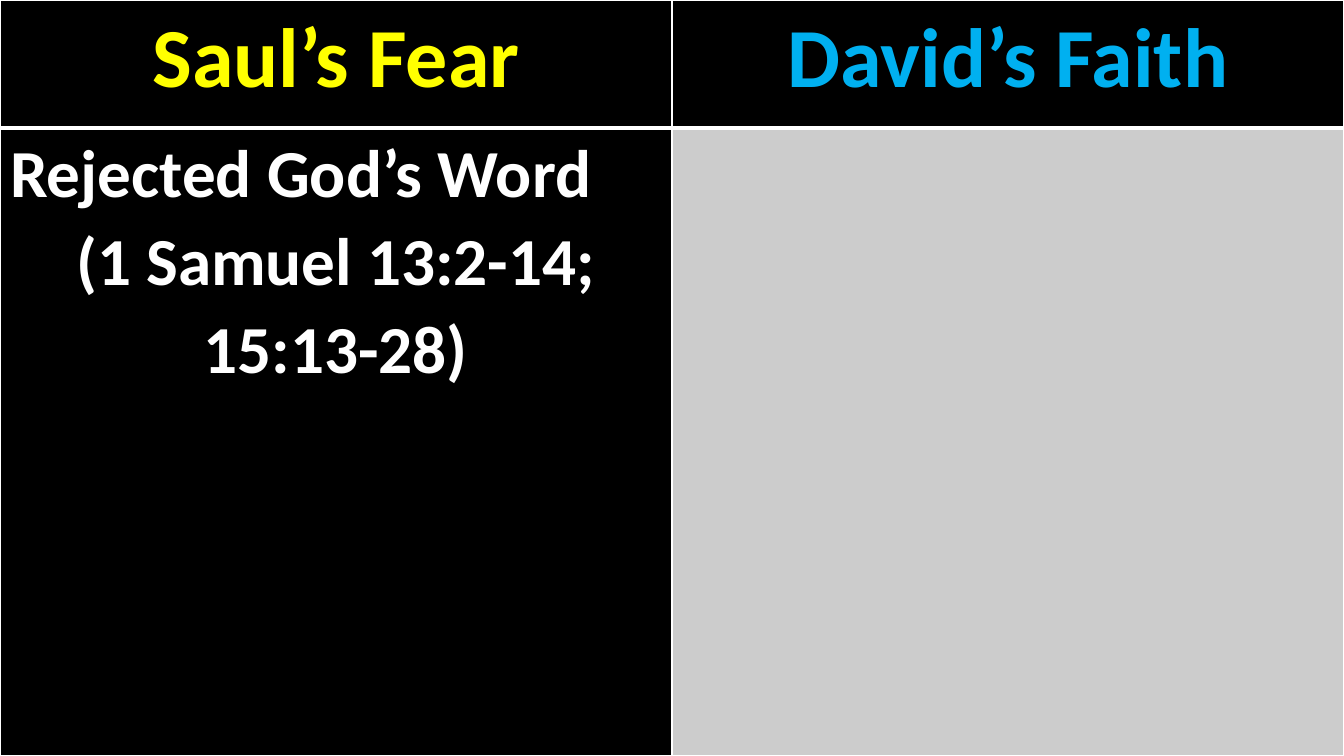
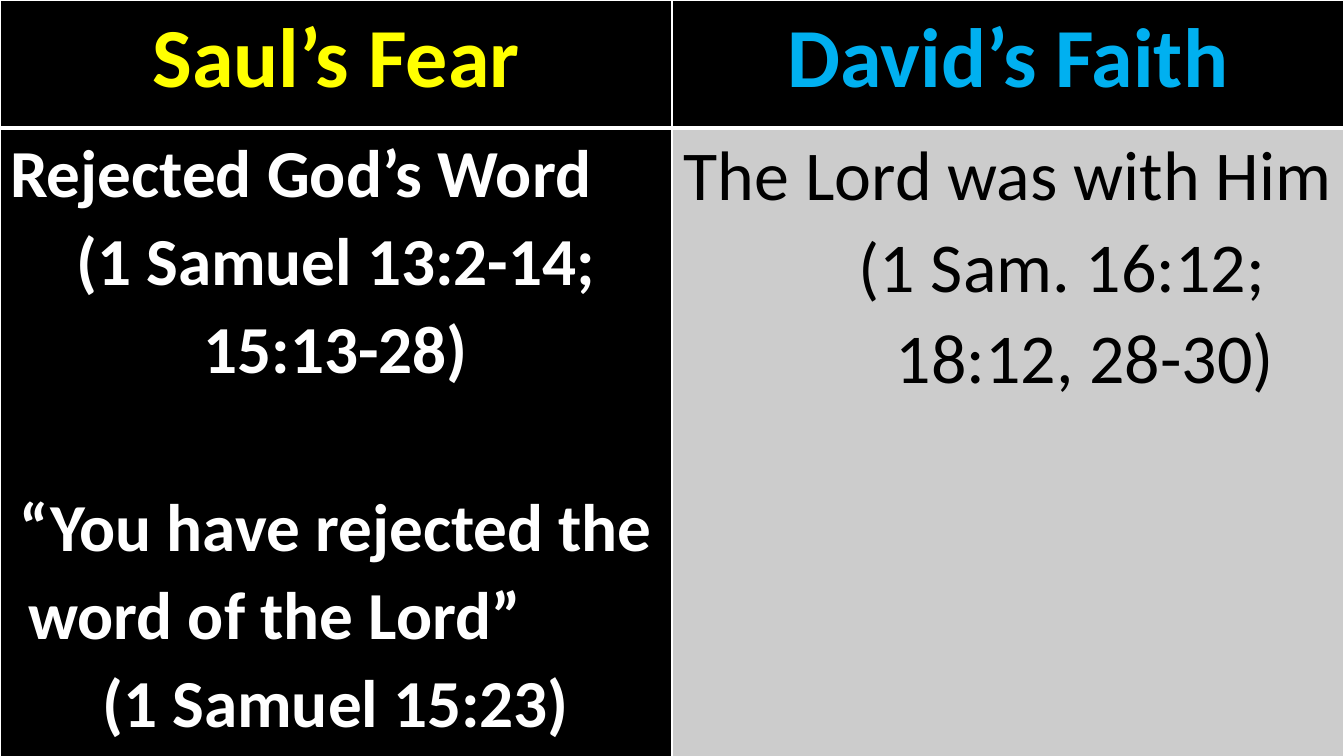
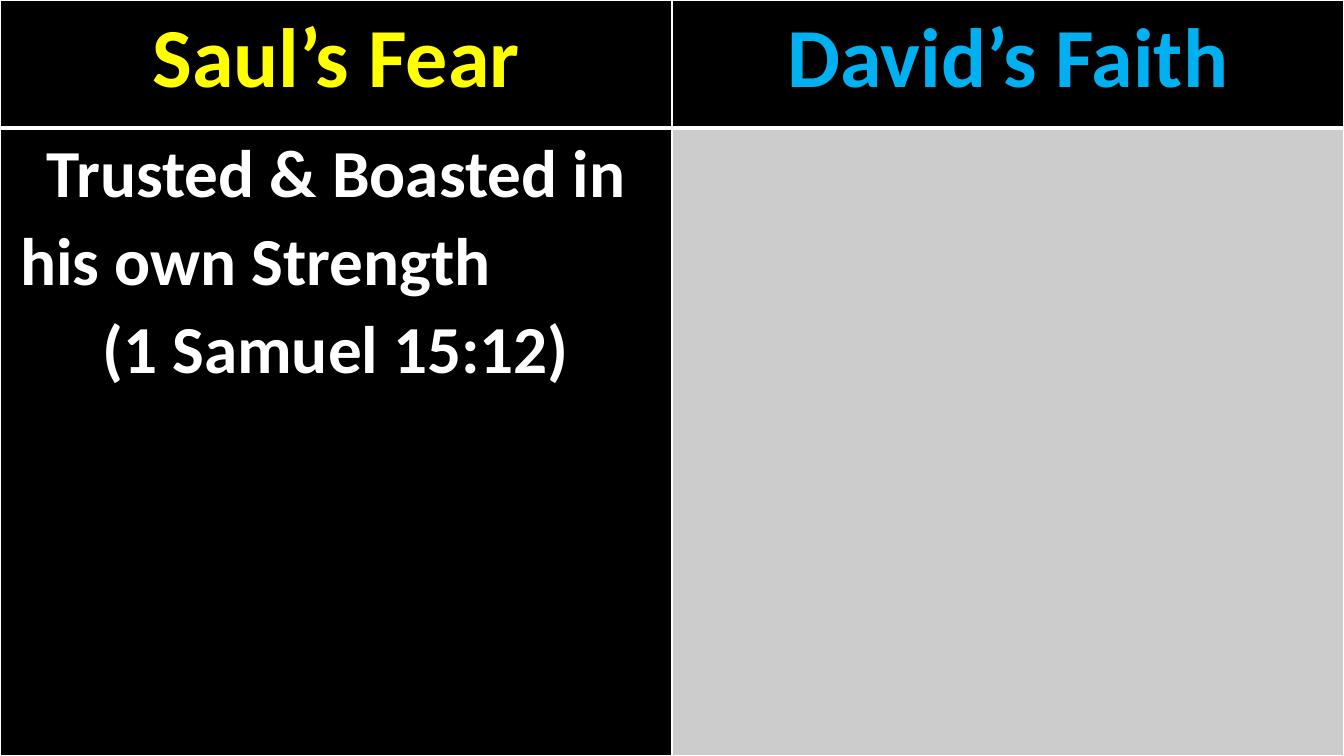
from lxml.etree import SubElement
from pptx import Presentation
from pptx.dml.color import RGBColor
from pptx.enum.text import PP_ALIGN
from pptx.oxml.ns import qn
from pptx.util import Inches, Pt

BLACK = RGBColor(0x00, 0x00, 0x00)
WHITE = RGBColor(0xFF, 0xFF, 0xFF)
YELLOW = RGBColor(0xFF, 0xFF, 0x00)
BLUE = RGBColor(0x00, 0xB0, 0xF0)
GRAY = RGBColor(0xCC, 0xCC, 0xCC)

SLIDE_W, SLIDE_H = 13.33, 7.5
HEADER_H = 1.27
BODY_H = SLIDE_H - HEADER_H
TALL_BODY_H = 6.84

HEADER_BORDERS = {"lnL": 1, "lnR": 1, "lnT": 1, "lnB": 3}
BODY_BORDERS = {"lnL": 1, "lnR": 1, "lnT": 1, "lnB": 1}
SAUL_HEADER = {"name": "Calibri", "size": Pt(60), "bold": True, "color": YELLOW}
DAVID_HEADER = {**SAUL_HEADER, "color": BLUE}
SAUL_BODY = {**SAUL_HEADER, "size": Pt(48), "color": WHITE}
DAVID_BODY = {**SAUL_BODY, "size": Pt(50), "bold": False, "color": BLACK}


def line(text, indent=None, before=0):
    """Describe one line: centred, or left-aligned when an indent is given."""
    return {"text": text, "indent": indent, "before": before}


def style_cell(cell, fill, borders):
    """Set the margins, white borders and fill of a cell."""
    margins = {"margin_left": 0.07, "margin_right": 0.07, "margin_top": 0, "margin_bottom": 0}
    for name, value in margins.items():
        setattr(cell, name, Inches(value))
    tc_pr = cell._tc.get_or_add_tcPr()
    for tag, width in borders.items():
        ln = SubElement(tc_pr, qn(f"a:{tag}"), w=str(Pt(width)))
        SubElement(SubElement(ln, qn("a:solidFill")), qn("a:srgbClr"), val=str(WHITE))
    cell.fill.solid()
    cell.fill.fore_color.rgb = fill


def write_lines(cell, lines, style):
    """Write each line as a paragraph of the cell."""
    tf = cell.text_frame
    for i, item in enumerate(lines):
        p = tf.add_paragraph() if i else tf.paragraphs[0]
        p.line_spacing = 1.07
        p.alignment = PP_ALIGN.CENTER
        if item["indent"] is not None:
            p.alignment = PP_ALIGN.LEFT
            p._p.get_or_add_pPr().set("marL", str(Inches(item["indent"])))
        if item["before"]:
            p.space_before = Pt(item["before"])
        r = p.add_run()
        r.text = item["text"]
        for name, value in style.items():
            if name == "color":
                r.font.color.rgb = value
            else:
                setattr(r.font, name, value)


def add_comparison(prs, saul, david=(), body_h=BODY_H):
    """Add a black slide comparing Saul and David in a two-column table."""
    s = prs.slides.add_slide(prs.slide_layouts[6])
    s.background.fill.solid()
    s.background.fill.fore_color.rgb = BLACK
    table = s.shapes.add_table(2, 2, 0, 0, Inches(SLIDE_W), Inches(HEADER_H + body_h)).table
    table.horz_banding = False
    for row, height in zip(table.rows, (HEADER_H, body_h)):
        row.height = Inches(height)
    columns = (
        ("Saul’s Fear", SAUL_HEADER, saul, SAUL_BODY, BLACK),
        ("David’s Faith", DAVID_HEADER, david, DAVID_BODY, GRAY),
    )
    for col, (title, title_style, lines, body_style, fill) in enumerate(columns):
        header, body = table.cell(0, col), table.cell(1, col)
        style_cell(header, BLACK, HEADER_BORDERS)
        write_lines(header, [line(title)], title_style)
        style_cell(body, fill, BODY_BORDERS)
        write_lines(body, lines, body_style)


def main():
    """Build and save the presentation."""
    prs = Presentation()
    prs.slide_width, prs.slide_height = Inches(SLIDE_W), Inches(SLIDE_H)
    rejected = [
        line("Rejected God’s Word", indent=0.03),
        line("(1 Samuel 13:2-14;"),
        line("15:13-28)"),
    ]
    quote = [
        line("“You have rejected the", before=65),
        line("word of the Lord”", indent=0.21),
        line("(1 Samuel 15:23)"),
    ]
    with_him = [
        line("The Lord was with Him"),
        line("(1 Sam. 16:12;", indent=1.78),
        line("18:12, 28-30)", indent=2.15),
    ]
    boasted = [
        line("Trusted & Boasted in"),
        line("his own Strength", indent=0.13),
        line("(1 Samuel 15:12)"),
    ]
    add_comparison(prs, rejected)
    add_comparison(prs, rejected + quote, with_him, TALL_BODY_H)
    add_comparison(prs, boasted)
    prs.save("out.pptx")


if __name__ == "__main__":
    main()
